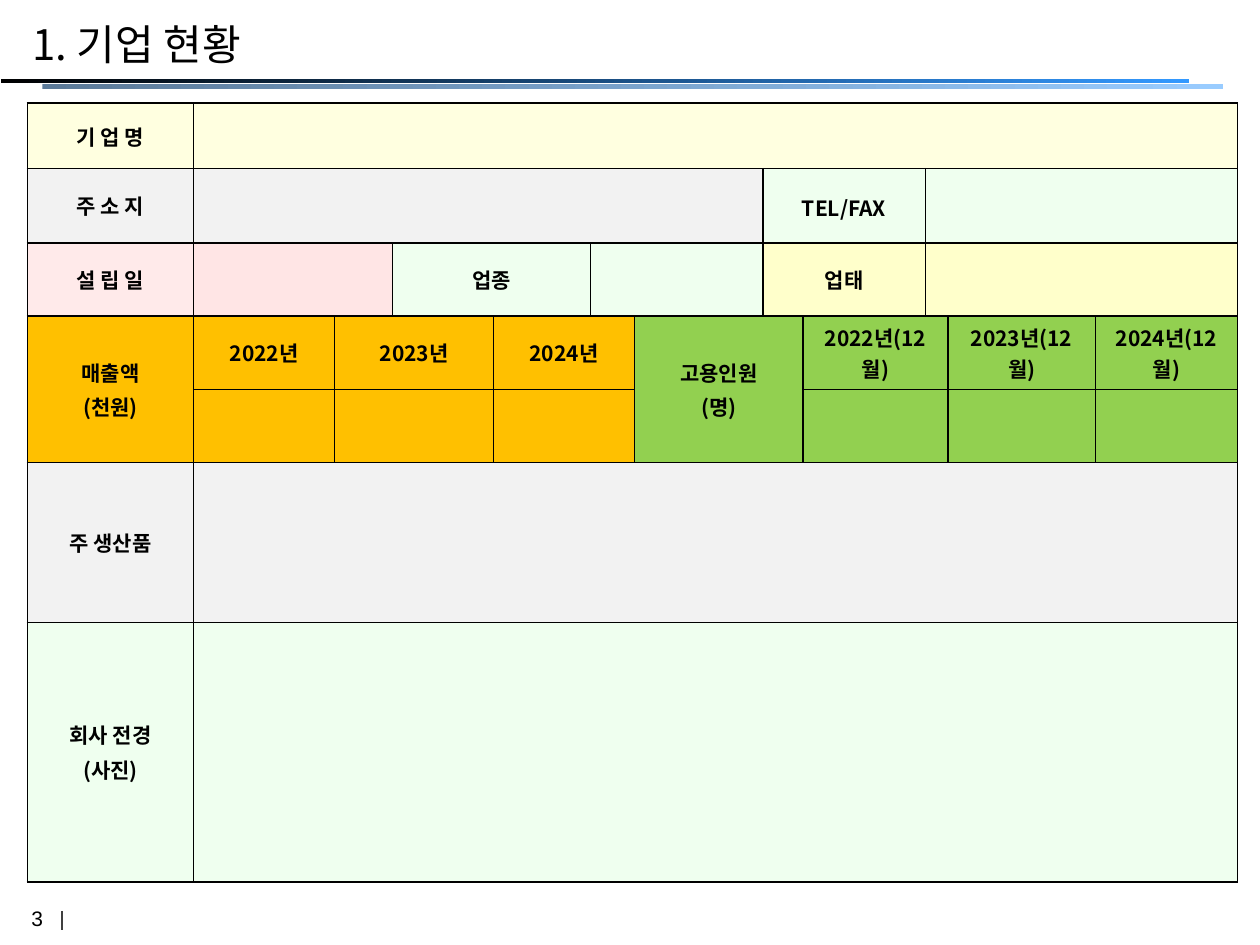
from lxml import etree
from pptx import Presentation
from pptx import util as u
from pptx.dml import color
from pptx.enum import shapes, text
from pptx.oxml import ns

FONT = "Noto Sans CJK KR"
BLACK = "000000"
YELLOW, GREY, MINT = ("FFFF66", 20), ("EAEAEA", 60), ("CCFFCC", 30)
PINK, ROSE, CREAM = ("FFCCCC", 40), ("FFCCCC", 50), ("FFFF99", 50)
ORANGE, GREEN = ("FFC000", 100), ("92D050", 100)

COLS = [95, 80.6, 33.1, 57.6, 55.4, 25.2, 73.4, 23, 69.8, 13, 84.2, 81.4]
ROWS = [37.4, 42.5, 41.8, 41.8, 41.8, 91.4, 148.3]

# For each row: (column, row span, column span, fill, text)
CELLS = [
    [(0, 1, 1, YELLOW, "기 업 명"), (1, 1, 11, YELLOW, "")],
    [(0, 1, 1, GREY, "주 소 지"), (1, 1, 6, GREY, ""),
     (7, 1, 2, MINT, "TEL/FAX"), (9, 1, 3, MINT, "")],
    [(0, 1, 1, PINK, "설 립 일"), (1, 1, 2, ROSE, ""), (3, 1, 2, MINT, "업종"),
     (5, 1, 2, MINT, ""), (7, 1, 2, CREAM, "업태"), (9, 1, 3, CREAM, "")],
    [(0, 2, 1, ORANGE, "매출액\n(천원)"), (1, 1, 1, ORANGE, "2022년"),
     (2, 1, 2, ORANGE, "2023년"), (4, 1, 2, ORANGE, "2024년"),
     (6, 2, 2, GREEN, "고용인원\n(명)"), (8, 1, 2, GREEN, "2022년(12월)"),
     (10, 1, 1, GREEN, "2023년(12월)"), (11, 1, 1, GREEN, "2024년(12월)")],
    [(1, 1, 1, ORANGE, ""), (2, 1, 2, ORANGE, ""), (4, 1, 2, ORANGE, ""),
     (8, 1, 2, GREEN, ""), (10, 1, 1, GREEN, ""), (11, 1, 1, GREEN, "")],
    [(0, 1, 1, GREY, "주 생산품"), (1, 1, 11, GREY, "")],
    [(0, 1, 1, MINT, "회사 전경\n(사진)"), (1, 1, 11, MINT, "")],
]


def rgb(value):
    return color.RGBColor.from_string(value)


def sub(parent, tag, **attrs):
    return etree.SubElement(parent, ns.qn(tag), attrs)


def write(tf, content, size=12, font=FONT, bold=False, center=True, before=0, spacing=None):
    """Fill a text frame, one paragraph for each line of content."""
    for i, line in enumerate(content.split("\n")):
        p = tf.add_paragraph() if i else tf.paragraphs[0]
        p.alignment = text.PP_ALIGN.CENTER if center else text.PP_ALIGN.LEFT
        p.space_before = u.Pt(before)
        if spacing:
            p.line_spacing = spacing
        r = p.add_run()
        r.text = line
        r.font.size, r.font.bold, r.font.name = u.Pt(size), bold, font
        r.font.color.rgb = rgb(BLACK)
        sub(r.font._element, "a:ea", typeface=font)


class Deck:
    def __init__(self, width, height):
        self.prs = Presentation()
        self.prs.slide_width, self.prs.slide_height = u.Pt(width), u.Pt(height)
        self.s = self.prs.slides.add_slide(self.prs.slide_layouts[6])

    def label(self, x, y, w, h, content, wrap=True, **style):
        tf = self.s.shapes.add_textbox(u.Pt(x), u.Pt(y), u.Pt(w), u.Pt(h)).text_frame
        tf.word_wrap = wrap
        write(tf, content, **style)

    def gradient_bar(self, x, y, w, h, start, end):
        sp = self.s.shapes.add_shape(shapes.MSO_SHAPE.RECTANGLE,
                                     u.Pt(x), u.Pt(y), u.Pt(w), u.Pt(h))
        sp.shadow.inherit = False
        sp.line.fill.background()
        sp.fill.gradient()
        sp.fill.gradient_angle = 0
        for stop, value in zip(sp.fill.gradient_stops, (start, end)):
            stop.color.rgb = rgb(value)

    def line(self, x1, y1, x2, y2, value, width):
        c = self.s.shapes.add_connector(shapes.MSO_CONNECTOR.STRAIGHT,
                                        u.Pt(x1), u.Pt(y1), u.Pt(x2), u.Pt(y2))
        c.line.color.rgb, c.line.width = rgb(value), u.Pt(width)
        sub(c._element.spPr, "a:effectLst")

    def table(self, x, y, cols, rows, cells):
        tbl = self.s.shapes.add_table(len(rows), len(cols), u.Pt(x), u.Pt(y),
                                      u.Pt(sum(cols)), u.Pt(sum(rows))).table
        tbl.first_row = tbl.horz_banding = False
        for col, w in zip(tbl.columns, cols):
            col.width = u.Pt(w)
        for row, h in zip(tbl.rows, rows):
            row.height = u.Pt(h)
        for i, row in enumerate(cells):
            for j, down, across, fill, content in row:
                if down * across > 1:
                    tbl.cell(i, j).merge(tbl.cell(i + down - 1, j + across - 1))
                for m in range(i, i + down):
                    for n in range(j, j + across):
                        self.style_cell(tbl.cell(m, n), *fill)
                if content:
                    latin = content.isascii()
                    write(tbl.cell(i, j).text_frame, content, bold=True,
                          before=0 if latin else 2.4, spacing=1.1 if latin else None)

    def style_cell(self, cell, value, opacity):
        """Set margins, a 1 pt black border and a fill with opacity in percent."""
        cell.margin_left = cell.margin_right = u.Pt(7.2)
        cell.margin_top = cell.margin_bottom = u.Pt(3.6)
        cell.vertical_anchor = text.MSO_ANCHOR.MIDDLE
        tc_pr = cell._tc.get_or_add_tcPr()
        for side in ("a:lnL", "a:lnR", "a:lnT", "a:lnB"):
            ln = sub(tc_pr, side, w=str(u.Pt(1)))
            sub(sub(ln, "a:solidFill"), "a:srgbClr", val=BLACK)
        clr = sub(sub(tc_pr, "a:solidFill"), "a:srgbClr", val=value)
        if opacity < 100:
            sub(clr, "a:alpha", val=str(opacity * 1000))


def main():
    deck = Deck(720, 540)
    deck.label(-3.6, 514, 49.7, 25.2, "3", wrap=False, font="Arial")
    deck.line(35.5, 520.5, 35.5, 531.5, "404040", 0.75)
    deck.gradient_bar(0.7, 44.9, 679, 2.6, BLACK, "3399FF")
    deck.gradient_bar(24.3, 48.2, 674.6, 2.6, "5B7A99", "99CCFF")
    deck.label(11.5, 7.2, 602.6, 46, "1. 기업 현황", size=24, center=False)
    deck.table(15.7, 59, COLS, ROWS, CELLS)
    deck.prs.save("out.pptx")


if __name__ == "__main__":
    main()
